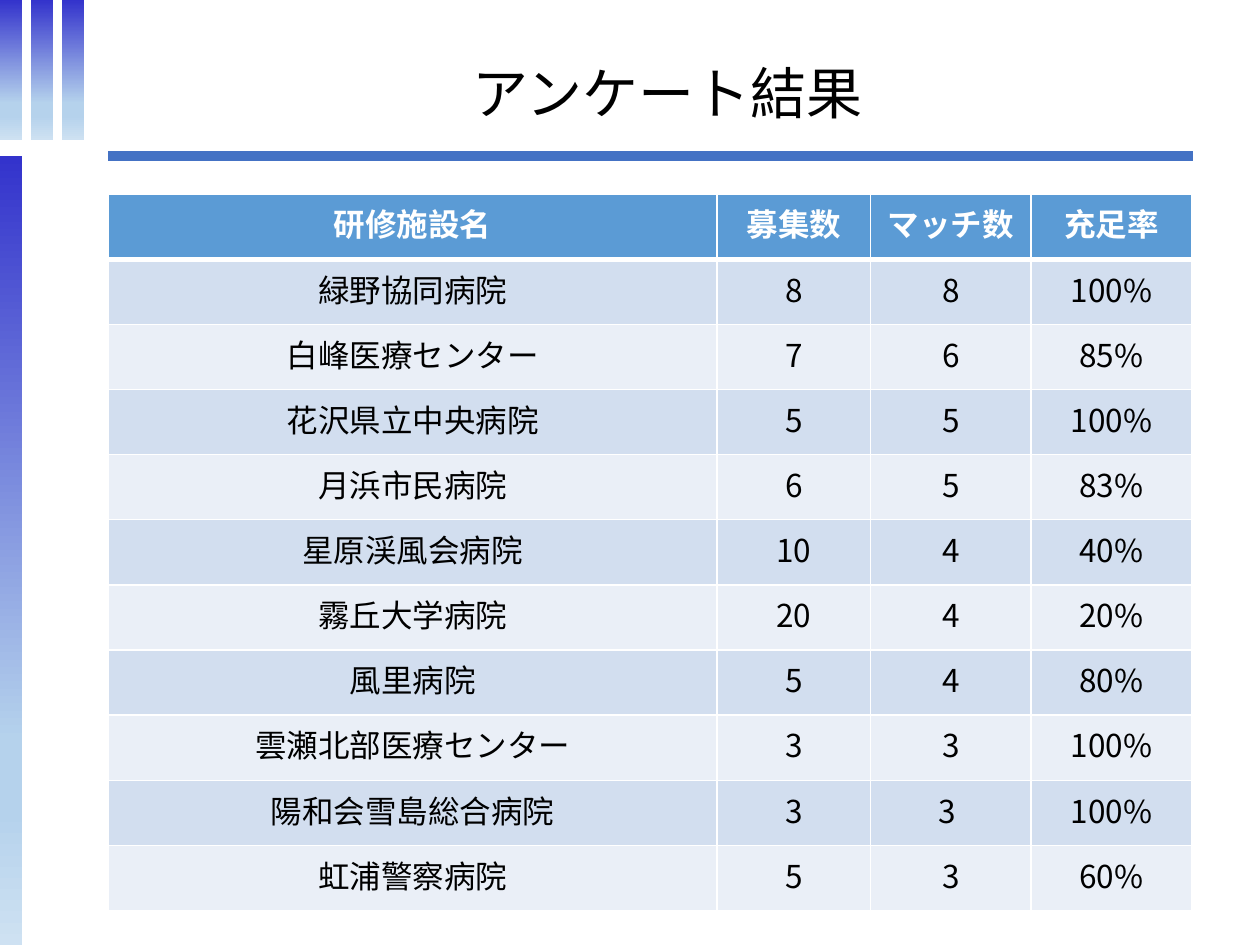
"""Build the survey results slide: a title above a table of hospital match rates."""
from dataclasses import dataclass

from lxml import etree
from pptx import Presentation
from pptx import util as u
from pptx.dml.color import RGBColor
from pptx.enum import shapes, text
from pptx.oxml import parse_xml
from pptx.oxml.ns import nsdecls, qn


@dataclass(frozen=True)
class Theme:
    """Colours, font and type sizes of the slide."""

    font: str = "Noto Sans CJK JP"
    title_size: int = 32
    table_size: int = 18
    ink: str = "000000"
    paper: str = "FFFFFF"
    rule: str = "4472C4"
    header: str = "5B9BD5"
    stripes: tuple = ("D2DEEF", "EAEFF7")
    fade: tuple = ((0, "3333CC"), (74, "B5D2EC"), (83, "B5D2EC"), (100, "CEE1F2"))


THEME = Theme()
GRID_COLUMNS = 100
SLIDE_WIDTH, SLIDE_HEIGHT = u.Inches(10), u.Inches(7.5)
MODULE = SLIDE_WIDTH / GRID_COLUMNS
GRID_ROWS = SLIDE_HEIGHT / MODULE

RULE_ROW = 12.4
BAR_WIDTH = 1.78
BAR_PITCH = 2.45
BAR_HEIGHT = 11.1

COLUMN_WIDTHS = (48.3, 12.2, 12.75, 12.75)
ROW_HEIGHT = 5.17
RESULTS = (
    ("研修施設名", "募集数", "マッチ数", "充足率"),
    ("緑野協同病院", "8", "8", "100%"),
    ("白峰医療センター", "7", "6", "85%"),
    ("花沢県立中央病院", "5", "5", "100%"),
    ("月浜市民病院", "6", "5", "83%"),
    ("星原渓風会病院", "10", "4", "40%"),
    ("霧丘大学病院", "20", "4", "20%"),
    ("風里病院", "5", "4", "80%"),
    ("雲瀬北部医療センター", "3", "3", "100%"),
    ("陽和会雪島総合病院", "3", "3 ", "100%"),
    ("虹浦警察病院", "5", "3", "60%"),
)


def grid(*modules):
    """Turn grid modules into slide lengths."""
    return [u.Emu(round(count * MODULE)) for count in modules]


def write(paragraph, wording, size, color, bold=False):
    """Add one centred run in the theme font."""
    paragraph.alignment = text.PP_ALIGN.CENTER
    run = paragraph.add_run()
    run.text = wording
    run.font.size = u.Pt(size)
    run.font.bold = bold
    run.font.color.rgb = RGBColor.from_string(color)
    run.font.name = THEME.font
    etree.SubElement(run.font._element, qn("a:ea"), typeface=THEME.font)


def add_fading_bar(slide, left, top, height):
    """Draw a bar that fades from top to bottom."""
    bar = slide.shapes.add_shape(
        shapes.MSO_SHAPE.RECTANGLE, *grid(left, top, BAR_WIDTH, height))
    bar.shadow.inherit = False
    bar.line.fill.background()
    bar.fill.gradient()
    bar.fill.gradient_angle = 270
    stops = bar._element.spPr.find(qn("a:gradFill")).find(qn("a:gsLst"))
    for stop in list(stops):
        stops.remove(stop)
    for percent, color in THEME.fade:
        stops.append(parse_xml(
            f'<a:gs {nsdecls("a")} pos="{percent * 1000}">'
            f'<a:srgbClr val="{color}"/></a:gs>'))


def add_rule(slide, left, right, row):
    """Draw the thick rule under the title."""
    rule = slide.shapes.add_connector(
        shapes.MSO_CONNECTOR.STRAIGHT, *grid(left, row, right, row))
    rule.line.width = u.Pt(6)
    rule.line.color.rgb = RGBColor.from_string(THEME.rule)
    etree.SubElement(rule._element.spPr, qn("a:effectLst"))


def set_title(slide, wording):
    """Place and fill the title placeholder."""
    title = slide.shapes.title
    title.left, title.top, title.width, title.height = grid(36.3, 4.1, 33.4, 6.4)
    frame = title.text_frame
    frame.word_wrap = False
    frame.auto_size = text.MSO_AUTO_SIZE.SHAPE_TO_FIT_TEXT
    write(frame.paragraphs[0], wording, THEME.title_size, THEME.ink)


def set_borders(cell, top, bottom):
    """Give a cell thin white side borders and the given top and bottom widths."""
    properties = cell._tc.get_or_add_tcPr()
    for side, points in zip("LRTB", (1, 1, top, bottom)):
        properties.append(parse_xml(
            f'<a:ln{side} {nsdecls("a")} w="{u.Pt(points)}"><a:solidFill>'
            f'<a:srgbClr val="{THEME.paper}"/></a:solidFill></a:ln{side}>'))


def add_results_table(slide, left, top):
    """Add the striped results table with its header row."""
    table = slide.shapes.add_table(
        len(RESULTS), len(COLUMN_WIDTHS),
        *grid(left, top, sum(COLUMN_WIDTHS), ROW_HEIGHT * len(RESULTS))).table
    for column, width in zip(table.columns, grid(*COLUMN_WIDTHS)):
        column.width = width
    for number, (row, entries) in enumerate(zip(table.rows, RESULTS)):
        row.height = grid(ROW_HEIGHT)[0]
        is_header = number == 0
        background = THEME.header if is_header else THEME.stripes[(number - 1) % 2]
        for cell, entry in zip(row.cells, entries):
            set_borders(cell, 3 if number == 1 else 1, 3 if is_header else 1)
            cell.fill.solid()
            cell.fill.fore_color.rgb = RGBColor.from_string(background)
            write(cell.text_frame.paragraphs[0], entry, THEME.table_size,
                  THEME.paper if is_header else THEME.ink, is_header)


def main():
    """Assemble and save the slide."""
    deck = Presentation()
    deck.slide_width, deck.slide_height = SLIDE_WIDTH, SLIDE_HEIGHT
    slide = deck.slides.add_slide(deck.slide_layouts.get_by_name("Title Only"))
    add_fading_bar(slide, 0, RULE_ROW, GRID_ROWS - RULE_ROW)
    for position in range(3):
        add_fading_bar(slide, position * BAR_PITCH, 0, BAR_HEIGHT)
    add_rule(slide, 8.6, 94.7, RULE_ROW)
    set_title(slide, "アンケート結果")
    add_results_table(slide, 8.6, 15.4)
    deck.save("out.pptx")


if __name__ == "__main__":
    main()
